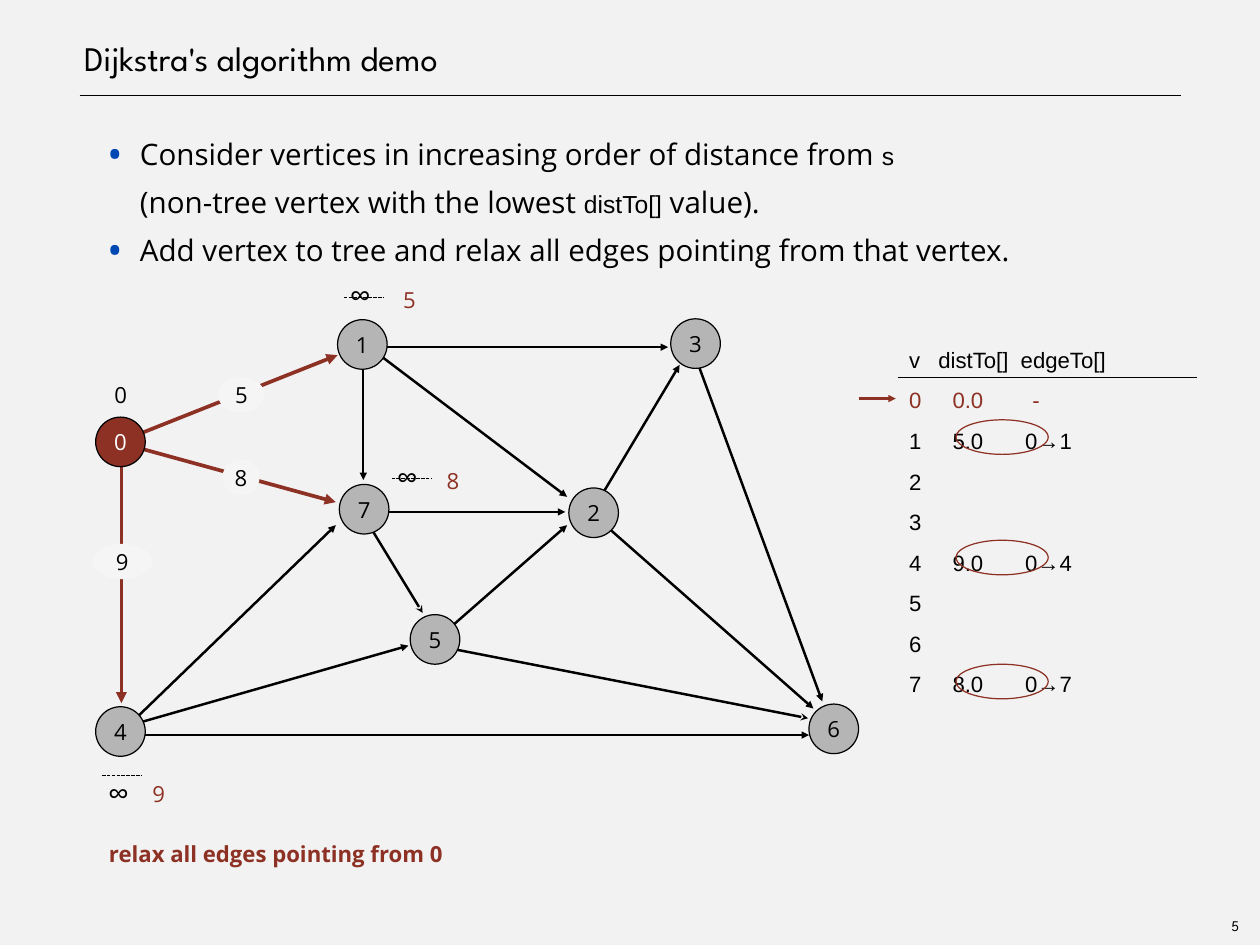
from dataclasses import dataclass

from lxml import etree
from pptx import Presentation
from pptx.dml.color import RGBColor
from pptx.enum.dml import MSO_LINE
from pptx.enum.shapes import MSO_CONNECTOR, MSO_SHAPE
from pptx.enum.text import MSO_ANCHOR, PP_ALIGN
from pptx.oxml.ns import qn
from pptx.util import Inches, Pt

BLACK = RGBColor(0x00, 0x00, 0x00)
WHITE = RGBColor(0xFF, 0xFF, 0xFF)
RED = RGBColor(0x8D, 0x31, 0x24)
GRAY = RGBColor(0xB5, 0xB5, 0xB5)
PALE = RGBColor(0xF5, 0xF5, 0xF5)
BACK = RGBColor(0xF2, 0xF2, 0xF2)
BLUE = RGBColor(0x00, 0x48, 0xB4)
OVAL = MSO_SHAPE.OVAL
STRAIGHT = MSO_CONNECTOR.STRAIGHT
DASH = MSO_LINE.SQUARE_DOT
TOP, MIDDLE, BOTTOM = MSO_ANCHOR.TOP, MSO_ANCHOR.MIDDLE, MSO_ANCHOR.BOTTOM
CENTER = PP_ALIGN.CENTER
SANS, TITLE, ARIAL = "Open Sans", "League Spartan", "Arial"
NODE = 0.56


@dataclass
class Line:
    start: tuple[float, float]
    end: tuple[float, float]
    color: RGBColor = BLACK
    width: float = 2
    head: str = "triangle"
    dashed: bool = False


@dataclass
class Oval:
    left: float
    top: float
    width: float = NODE
    height: float = NODE
    text: str = ""
    fill: RGBColor | None = None
    line: RGBColor | None = None
    ink: RGBColor = BLACK


@dataclass
class Label:
    text: str
    left: float
    top: float
    width: float = 0.35
    height: float = 0.42
    size: float = 18
    color: RGBColor = BLACK
    font: str = SANS
    bold: bool = False
    space: float | None = None


@dataclass
class Row:
    text: str
    tabs: tuple[float, float] = (0.49, 1.31)
    color: RGBColor = BLACK


EDGES = [
    Line((5.02, 7.31), (9.12, 8.11), head="stealth"),
    Line((1.41, 8.23), (3.79, 5.93)),
    Line((4.06, 5.78), (6.38, 5.78)),
    Line((4.1, 3.88), (4.1, 5.42)),
    Line((7.83, 3.98), (9.28, 7.92)),
    Line((6.63, 5.86), (7.67, 4.12)),
    Line((6.83, 5.93), (9.18, 8)),
    Line((1.36, 8.3), (9.13, 8.3)),
    Line((1.37, 5.15), (1.37, 7.94), RED, 3),
    Line((1.39, 5.01), (3.79, 5.67), RED, 3),
    Line((1.42, 4.96), (3.81, 4.01), RED, 3),
    Line((4.18, 3.93), (6.4, 5.61)),
    Line((4.08, 3.92), (7.54, 3.92)),
    Line((4.05, 5.74), (4.77, 6.92), head="stealth"),
    Line((4.94, 7.21), (6.4, 5.93)),
    Line((1.36, 8.22), (4.61, 7.29)),
]
NODES = [(1.08, 4.71), (3.81, 3.61), (6.42, 5.51), (7.57, 3.6),
         (1.08, 7.98), (4.63, 6.94), (9.13, 7.95), (3.83, 5.47)]
WEIGHTS = [
    Oval(1.04, 6.14, 0.68, 0.4, "9", PALE),
    Oval(2.51, 5.19, 0.42, 0.4, "8", PALE),
    Oval(2.46, 4.26, 0.53, 0.4, "5", PALE),
]
LABELS = [
    Label("∞", 3.83, 3.07, 0.5, 0.51, 24),
    Label("∞", 4.36, 5.12, 0.5, 0.51, 24),
    Label("∞", 1.1, 8.49, 0.5, 0.51, 24, space=1.5),
    Label("5", 4.43, 3.17, color=RED),
    Label("8", 4.92, 5.22, color=RED),
    Label("9", 1.6, 8.6, color=RED, space=1.5),
    Label("0", 1.17, 4.25),
    Label("relax all edges pointing from 0", 1.11, 9.28, 4.18, 0.4,
          color=RED, bold=True, space=1.5),
]
STRIKES = [(3.88, 3.36), (4.42, 5.4), (1.15, 8.76)]
RULES = [
    Line((0.9, 1.08), (13.33, 1.08), width=1, head=""),
    Line((10.13, 4.26), (13.51, 4.26), width=1, head=""),
    Line((9.69, 4.5), (10.11, 4.5), RED),
]
ROWS = [
    Row("v\tdistTo[]\tedgeTo[]", (0.33, 1.26)),
    Row("0\t0.0\t-", (0.49, 1.39), RED),
    Row("1\t5.0\t0→1"), Row("2"), Row("3"), Row("4\t9.0\t0→4"),
    Row("5"), Row("6"), Row("7\t8.0\t0→7"),
]
BULLETS = [
    [("Consider vertices in increasing order of distance from ", SANS), ("s", ARIAL),
     ("\n", SANS), ("(non-tree vertex with the lowest ", SANS),
     ("distTo[]", ARIAL), (" value).", SANS)],
    [("Add vertex to tree and relax all edges pointing from that vertex.", SANS)],
]


def style(font, name: str, size: float, color: RGBColor, bold: bool = False) -> None:
    font.name, font.size, font.bold = name, Pt(size), bold
    font.color.rgb = color


def add_line(slide, item: Line) -> None:
    shape = slide.shapes.add_connector(
        STRAIGHT, *(Inches(v) for v in (*item.start, *item.end)))
    shape.line.color.rgb = item.color
    shape.line.width = Pt(item.width)
    if item.dashed:
        shape.line.dash_style = DASH
    if item.head:
        etree.SubElement(shape.line._get_or_add_ln(), qn("a:tailEnd"), type=item.head)
    etree.SubElement(shape._element.spPr, qn("a:effectLst"))


def add_oval(slide, item: Oval) -> None:
    shape = slide.shapes.add_shape(
        OVAL, *(Inches(v) for v in (item.left, item.top, item.width, item.height)))
    shape.shadow.inherit = False
    if item.fill is None:
        shape.fill.background()
    else:
        shape.fill.solid()
        shape.fill.fore_color.rgb = item.fill
    if item.line is None:
        shape.line.fill.background()
    else:
        shape.line.color.rgb = item.line
        shape.line.width = Pt(1)
    if item.text:
        frame = shape.text_frame
        frame.margin_left = frame.margin_right = frame.margin_top = frame.margin_bottom = 0
        frame.vertical_anchor = MIDDLE
        frame.text = item.text
        para = frame.paragraphs[0]
        para.alignment = CENTER
        style(para.runs[0].font, SANS, 18, item.ink)


def add_frame(slide, box: tuple[float, ...], left: float = 0.12, pad: float = 0.06,
              anchor: MSO_ANCHOR = TOP):
    frame = slide.shapes.add_textbox(*(Inches(v) for v in box)).text_frame
    frame.word_wrap = True
    frame.vertical_anchor = anchor
    frame.margin_left = Inches(left)
    frame.margin_right = frame.margin_top = frame.margin_bottom = Inches(pad)
    return frame


def add_label(slide, item: Label, **spots):
    frame = add_frame(slide, (item.left, item.top, item.width, item.height), **spots)
    frame.text = item.text
    para = frame.paragraphs[0]
    if item.space:
        para.line_spacing = item.space
    style(para.runs[0].font, item.font, item.size, item.color, item.bold)
    return para


def add_points(slide) -> None:
    frame = add_frame(slide, (0.89, 1.39, 12.44, 1.7), left=0, pad=0)
    for i, parts in enumerate(BULLETS):
        para = frame.add_paragraph() if i else frame.paragraphs[0]
        props = para._p.get_or_add_pPr()
        props.set("marL", str(Inches(0.69)))
        props.set("indent", str(Inches(-0.37)))
        tint = etree.SubElement(props, qn("a:buClr"))
        etree.SubElement(tint, qn("a:srgbClr"), val=str(BLUE))
        etree.SubElement(props, qn("a:buSzPct"), val="140000")
        etree.SubElement(props, qn("a:buFont"), typeface=SANS)
        etree.SubElement(props, qn("a:buChar"), char="•")
        para.line_spacing = Pt(39)
        for text, font in parts:
            if text == "\n":
                para.add_line_break()
                continue
            run = para.add_run()
            run.text = text
            style(run.font, font, 20 if font == ARIAL else 24, BLACK)


def add_rows(slide) -> None:
    frame = add_frame(slide, (10.14, 3.69, 3.5, 4.22))
    frame.text = "\n".join(row.text for row in ROWS)
    for para, row in zip(frame.paragraphs, ROWS):
        stops = etree.SubElement(para._p.get_or_add_pPr(), qn("a:tabLst"))
        for stop in row.tabs:
            etree.SubElement(stops, qn("a:tab"), pos=str(Inches(stop)), algn="l")
        para.line_spacing = Pt(33)
        for run in para.runs:
            style(run.font, ARIAL, 18, row.color)


def main() -> None:
    deck = Presentation()
    deck.slide_width, deck.slide_height = Inches(14.22), Inches(10.67)
    slide = deck.slides.add_slide(deck.slide_layouts[6])
    slide.background.fill.solid()
    slide.background.fill.fore_color.rgb = BACK
    add_label(slide, Label("Dijkstra's algorithm demo", 0.89, 0, 12.44, 0.89, 28, font=TITLE),
              left=0.06, pad=0, anchor=BOTTOM)
    add_points(slide)
    strikes = [Line((x, y), (x + 0.45, y), width=1, head="", dashed=True) for x, y in STRIKES]
    for line in EDGES + RULES + strikes:
        add_line(slide, line)
    for i, (x, y) in enumerate(NODES):
        add_oval(slide, Oval(x, y, text=str(i), fill=GRAY if i else RED, line=BLACK,
                             ink=BLACK if i else WHITE))
    for oval in WEIGHTS:
        add_oval(slide, oval)
    add_rows(slide)
    for top in (4.74, 6.1, 7.5):
        add_oval(slide, Oval(10.79, top, 1.04, 0.39, line=RED))
    for label in LABELS:
        add_label(slide, label)
    page = add_label(slide, Label("5", 13.77, 10.3, 0.34, 0.31, 12, font=TITLE),
                     left=0.06, anchor=MIDDLE)
    page.alignment = CENTER
    deck.save("out.pptx")


if __name__ == "__main__":
    main()
